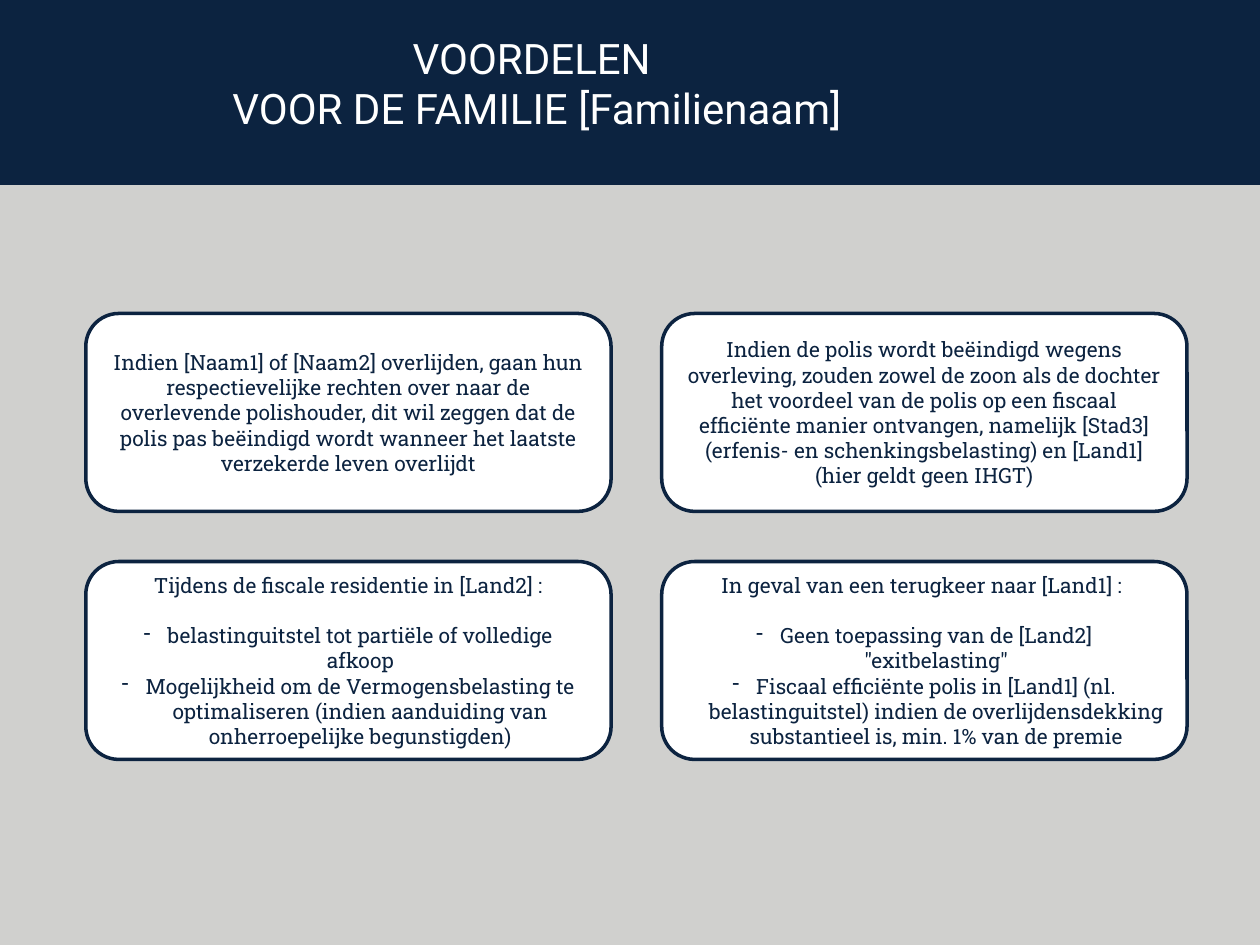
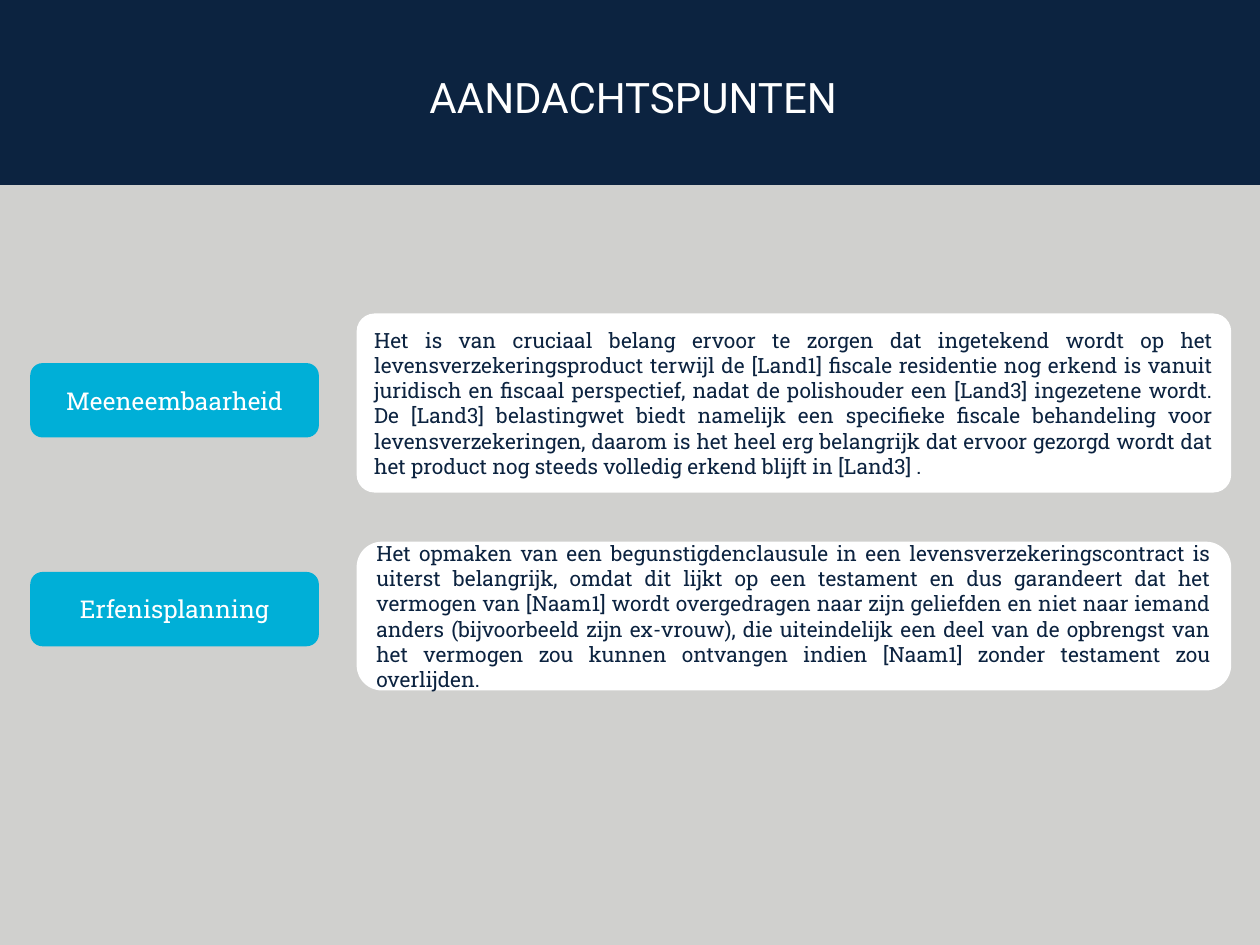
from lxml import etree
from pptx import Presentation
from pptx.dml.color import RGBColor
from pptx.enum.shapes import MSO_SHAPE
from pptx.enum.text import MSO_ANCHOR, MSO_AUTO_SIZE, PP_ALIGN
from pptx.oxml.ns import qn
from pptx.util import Cm, Pt

NAVY = RGBColor(0x0C, 0x23, 0x40)
CYAN = RGBColor(0x00, 0xAF, 0xD7)
GREY = RGBColor(0xD0, 0xD0, 0xCE)
WHITE = RGBColor(0xFF, 0xFF, 0xFF)

RECTANGLE = MSO_SHAPE.RECTANGLE
ROUNDED = MSO_SHAPE.ROUNDED_RECTANGLE
MIDDLE = MSO_ANCHOR.MIDDLE
GROW = MSO_AUTO_SIZE.SHAPE_TO_FIT_TEXT
CENTER = PP_ALIGN.CENTER
JUSTIFY = PP_ALIGN.JUSTIFY

TITLE = {"name": "Roboto", "size": Pt(24)}
BODY = {"name": "Roboto Slab", "size": Pt(12)}
LABEL = {"name": "Roboto Slab", "size": Pt(14)}

SLIDE_WIDTH, SLIDE_HEIGHT = 25.4, 19.05
BAND_HEIGHT = 3.73
CONTENT_TOP = 6.32
DASH_INDENT = Cm(0.48)
LIST_GAP = Pt(14.4)


class Builder:
    """Holds the shared style and the page being filled."""

    def __init__(self):
        self.deck = Presentation()
        self.deck.slide_width = Cm(SLIDE_WIDTH)
        self.deck.slide_height = Cm(SLIDE_HEIGHT)
        self.page = None

    def new_page(self, title_lines, title_area):
        self.page = self.deck.slides.add_slide(self.deck.slide_layouts[6])
        background = self.page.background.fill
        background.solid()
        background.fore_color.rgb = GREY
        self.shape(RECTANGLE, (0, 0, SLIDE_WIDTH, BAND_HEIGHT), NAVY)
        box = self.page.shapes.add_textbox(*map(Cm, title_area))
        box.text_frame.word_wrap = True
        box.text_frame.auto_size = GROW
        self.add_text(box, title_lines, TITLE, WHITE)

    def shape(self, kind, area, fill, outline=None):
        box = self.page.shapes.add_shape(kind, *map(Cm, area))
        box.shadow.inherit = False
        box.fill.solid()
        box.fill.fore_color.rgb = fill
        if outline is None:
            box.line.fill.background()
        else:
            box.line.color.rgb = outline
            box.line.width = Pt(2)
        return box

    def card(self, area, lines, text_format=BODY, fill=WHITE, color=NAVY,
             outline=None, align=CENTER, points=()):
        box = self.shape(ROUNDED, area, fill, outline)
        box.text_frame.vertical_anchor = MIDDLE
        box.text_frame.word_wrap = True
        self.add_text(box, lines, text_format, color, align, points)
        return box

    def add_text(self, box, lines, text_format, color, align=CENTER, points=()):
        frame = box.text_frame
        for index, text in enumerate([*lines, *points]):
            para = frame.paragraphs[0] if index == 0 else frame.add_paragraph()
            para.alignment = align
            if index >= len(lines):
                self.dash(para)
                if index == len(lines):
                    para.space_before = LIST_GAP
            span = para.add_run()
            span.text = text
            for name, value in text_format.items():
                setattr(span.font, name, value)
            span.font.color.rgb = color

    def dash(self, para):
        properties = para._p.get_or_add_pPr()
        properties.set("marL", str(DASH_INDENT))
        properties.set("indent", str(-DASH_INDENT))
        etree.SubElement(properties, qn("a:buChar")).set("char", "-")


def add_benefits(builder):
    builder.new_page(["VOORDELEN ", "VOOR DE FAMILIE [Familienaam]"],
                     (-1.09, 0.53, 23.83, 3.33))

    # Two by two grid: heading lines and dashed points of each card
    benefits = [
        (["Indien [Naam1] of [Naam2] overlijden, gaan hun respectievelijke "
          "rechten over naar de overlevende polishouder, dit wil zeggen dat de "
          "polis pas beëindigd wordt wanneer het laatste verzekerde leven "
          "overlijdt"], []),
        (["Indien de polis wordt beëindigd wegens overleving, zouden zowel de "
          "zoon als de dochter het voordeel van de polis op een fiscaal "
          "efficiënte manier ontvangen, namelijk [Stad3] (erfenis- en "
          "schenkingsbelasting) en [Land1] (hier geldt geen IHGT)"], []),
        (["Tijdens de fiscale residentie in [Land2] :"],
         ["belastinguitstel tot partiële of volledige afkoop",
          "Mogelijkheid om de Vermogensbelasting te optimaliseren (indien "
          "aanduiding van onherroepelijke begunstigden)"]),
        (["In geval van een terugkeer naar [Land1] : "],
         ['Geen toepassing van de [Land2] "exitbelasting"',
          "Fiscaal efficiënte polis in [Land1] (nl. belastinguitstel) indien "
          "de overlijdensdekking substantieel is, min. 1% van de premie"]),
    ]
    for index, (lines, points) in enumerate(benefits):
        row, column = divmod(index, 2)
        area = (1.73 + column * 11.61, CONTENT_TOP + row * 5, 10.59, 3.99)
        builder.card(area, lines, outline=NAVY, points=points)


def add_concerns(builder):
    builder.new_page(["AANDACHTSPUNTEN"], (2.11, 1.32, 21.31, 1.27))

    # Each row: label, its top, explanation, its top, height and corner
    concerns = [
        ("Meeneembaarheid", 7.32,
         "Het is van cruciaal belang ervoor te zorgen dat ingetekend wordt op "
         "het levensverzekeringsproduct terwijl de [Land1] fiscale residentie "
         "nog erkend is vanuit juridisch en fiscaal perspectief, nadat de "
         "polishouder een [Land3] ingezetene wordt. De [Land3] belastingwet "
         "biedt namelijk een specifieke fiscale behandeling voor "
         "levensverzekeringen, daarom is het heel erg belangrijk dat ervoor "
         "gezorgd wordt dat het product nog steeds volledig erkend blijft in "
         "[Land3] .", CONTENT_TOP, 3.61, 0.1),
        ("Erfenisplanning", 11.53,
         "Het opmaken van een begunstigdenclausule in een "
         "levensverzekeringscontract is uiterst belangrijk, omdat dit lijkt op "
         "een testament en dus garandeert dat het vermogen van [Naam1] wordt "
         "overgedragen naar zijn geliefden en niet naar iemand anders "
         "(bijvoorbeeld zijn ex-vrouw), die uiteindelijk een deel van de "
         "opbrengst van het vermogen zou kunnen ontvangen indien [Naam1] "
         "zonder testament zou overlijden.", 10.92, 3, 0.17),
    ]
    for label, label_top, text, top, height, corner in concerns:
        explanation = builder.card((7.19, top, 17.63, height), [text],
                                   align=JUSTIFY)
        explanation.adjustments[0] = corner
        builder.card((0.61, label_top, 5.82, 1.5), [label], LABEL, CYAN, WHITE)


def main():
    builder = Builder()
    add_benefits(builder)
    add_concerns(builder)
    builder.deck.save("out.pptx")


if __name__ == "__main__":
    main()
